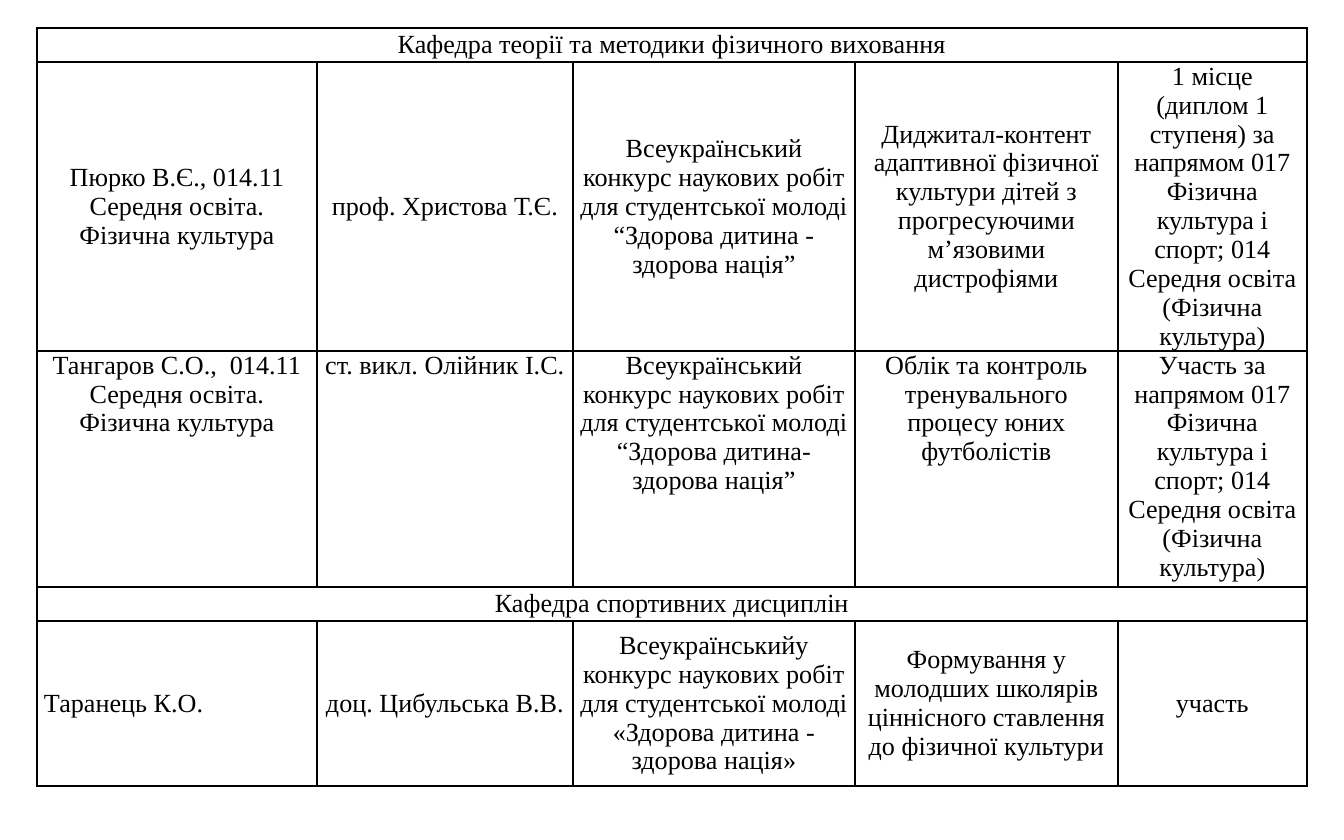
import pptx
import pptx.util
import pptx.dml.color
import pptx.enum.text
import pptx.oxml
import pptx.oxml.ns

PX = 914400 / 134.4
BLACK = pptx.dml.color.RGBColor(0x00, 0x00, 0x00)
WHITE = pptx.dml.color.RGBColor(0xFF, 0xFF, 0xFF)
ALIGN = pptx.enum.text.PP_ALIGN
ANCHOR = pptx.enum.text.MSO_ANCHOR

COLUMN_WIDTHS = [280, 256, 282, 263, 189]
ROW_HEIGHTS = [34, 289, 236, 34, 165]
ROWS = [
    ["Кафедра теорії та методики фізичного виховання"],
    ["Пюрко В.Є., 014.11 Середня освіта. Фізична культура",
     "проф. Христова Т.Є.",
     "Всеукраїнський конкурс наукових робіт для студентської молоді “Здорова дитина - здорова нація”",
     "Диджитал-контент адаптивної фізичної культури дітей з прогресуючими м’язовими дистрофіями",
     "1 місце (диплом 1 ступеня) за напрямом 017 Фізична культура і спорт; "
     "014 Середня освіта (Фізична культура)"],
    ["Тангаров С.О.,  014.11 Середня освіта. Фізична культура",
     "ст. викл. Олійник І.С.",
     "Всеукраїнський конкурс наукових робіт для студентської молоді “Здорова дитина-здорова нація”",
     "Облік та контроль тренувального процесу юних футболістів",
     "Участь за напрямом 017 Фізична культура і спорт; 014 Середня освіта (Фізична культура)"],
    ["Кафедра спортивних дисциплін"],
    ["Таранець К.О.",
     "доц. Цибульська В.В.",
     "Всеукраїнськийу конкурс наукових робіт для студентської молоді «Здорова дитина - здорова нація»",
     "Формування у молодших школярів ціннісного ставлення до фізичної культури",
     "участь"],
]
TOP_ANCHORED_ROW = 2
JUSTIFIED_CELL = (4, 0)


def px(length):
    return pptx.util.Emu(round(length * PX))


def add_borders(cell):
    """Draw a 1 pt black line on all four sides; borders precede the fill."""
    properties = cell._tc.get_or_add_tcPr()
    for position, side in enumerate(["lnL", "lnR", "lnT", "lnB"]):
        line = pptx.oxml.parse_xml(
            f'<a:{side} {pptx.oxml.ns.nsdecls("a")} w="12700"><a:solidFill>'
            f'<a:srgbClr val="{BLACK}"/></a:solidFill></a:{side}>')
        properties.insert(position, line)


deck = pptx.Presentation()
deck.slide_width = pptx.util.Inches(10)
deck.slide_height = pptx.util.Inches(6.25)
page = deck.slides.add_slide(deck.slide_layouts[6])

table = page.shapes.add_table(
    len(ROWS), len(COLUMN_WIDTHS), px(37), px(28),
    px(sum(COLUMN_WIDTHS)), px(sum(ROW_HEIGHTS))).table
table.first_row = False
table.horz_banding = False
for column, width in zip(table.columns, COLUMN_WIDTHS):
    column.width = px(width)
for row, height in zip(table.rows, ROW_HEIGHTS):
    row.height = px(height)

for row_index, texts in enumerate(ROWS):
    if len(texts) == 1:
        table.cell(row_index, 0).merge(table.cell(row_index, len(COLUMN_WIDTHS) - 1))
    for column_index in range(len(COLUMN_WIDTHS)):
        cell = table.cell(row_index, column_index)
        cell.fill.solid()
        cell.fill.fore_color.rgb = WHITE
        add_borders(cell)
        cell.margin_left = cell.margin_right = px(7)
        cell.margin_top = cell.margin_bottom = 0
        cell.vertical_anchor = ANCHOR.TOP if row_index == TOP_ANCHORED_ROW else ANCHOR.MIDDLE
        para = cell.text_frame.paragraphs[0]
        if column_index < len(texts):
            para.text = texts[column_index]
        justified = (row_index, column_index) == JUSTIFIED_CELL
        para.alignment = ALIGN.JUSTIFY if justified else ALIGN.CENTER
        para.font.name = "Times New Roman"
        para.font.size = pptx.util.Pt(14)
        para.font.color.rgb = BLACK

deck.save("out.pptx")
